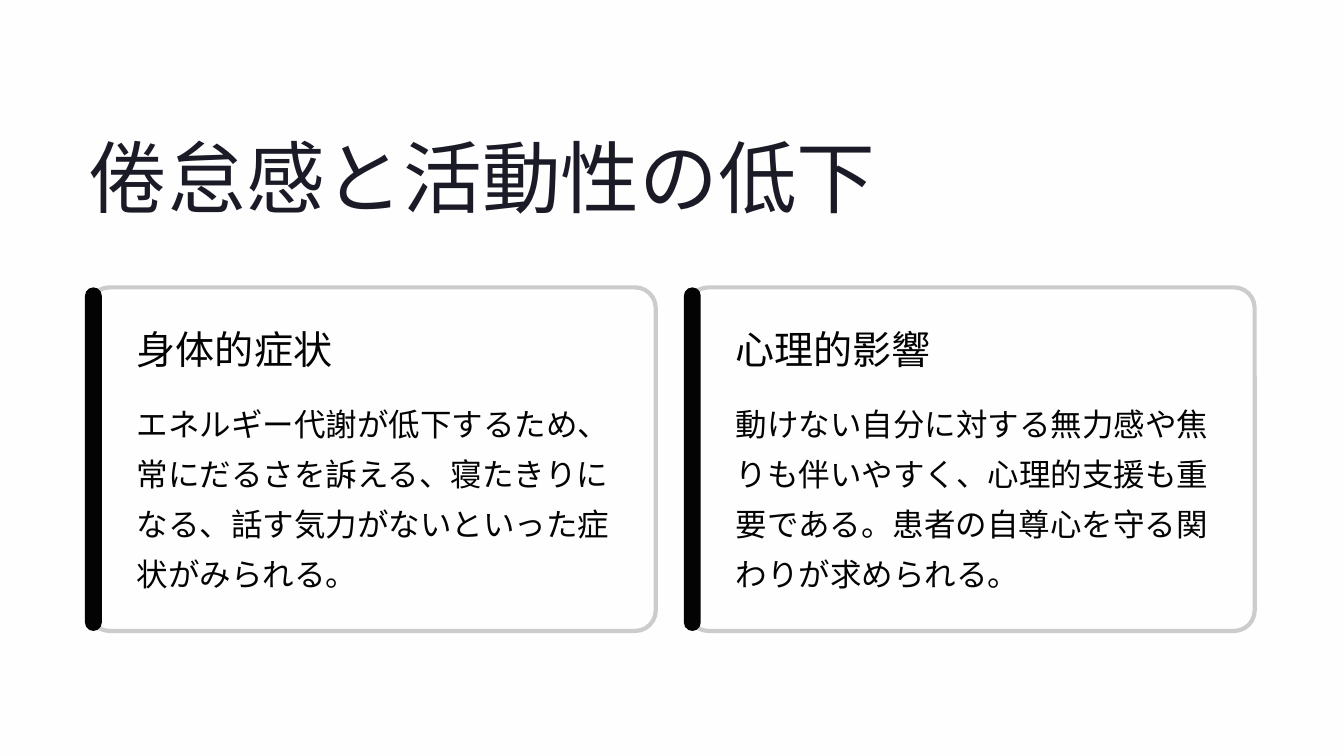
from lxml.etree import SubElement
from pptx import Presentation
from pptx.dml.color import RGBColor
from pptx.enum.shapes import MSO_SHAPE as Preset
from pptx.oxml.ns import qn
from pptx.util import Cm, Pt

COLORS = {
    "page": "FEFEFE",
    "card": "FFFFFF",
    "border": "CCCCCC",
    "title": "1B1B27",
    "ink": "030303",
}
FORMATS = {
    "title": {"size": Pt(67.5), "name": "Inter"},
    "heading": {"size": Pt(33.5), "name": "Inter"},
    "body": {"size": Pt(27), "name": "Cabin"},
}
SPACING = {"title": Pt(84.5), "heading": Pt(42), "body": Pt(43)}
CARDS = [
    (
        "身体的症状",
        "エネルギー代謝が低下するため、常にだるさを訴える、寝たきりになる、話す気力がないといった症状がみられる。",
    ),
    (
        "心理的影響",
        "動けない自分に対する無力感や焦りも伴いやすく、心理的支援も重要である。患者の自尊心を守る関わりが求められる。",
    ),
]
CARD_LEFT, CARD_TOP, CARD_WIDTH, CARD_HEIGHT = 2.69, 8.69, 17.14, 10.39
CARD_PITCH = 18.11

deck = Presentation()
deck.slide_width, deck.slide_height = Cm(40.64), Cm(22.86)
page = deck.slides.add_slide(deck.slide_layouts[6])
page.background.fill.solid()
page.background.fill.fore_color.rgb = RGBColor.from_string(COLORS["page"])


def add_text(words, role, color, left, top, width, height):
    box = page.shapes.add_textbox(Cm(left), Cm(top), Cm(width), Cm(height))
    frame = box.text_frame
    frame.word_wrap = role == "body"
    for side in ("left", "top", "right", "bottom"):
        setattr(frame, f"margin_{side}", 0)
    para = frame.paragraphs[0]
    para.line_spacing = SPACING[role]
    span = para.add_run()
    span.text = words
    for key, value in FORMATS[role].items():
        setattr(span.font, key, value)
    span.font.color.rgb = RGBColor.from_string(COLORS[color])


def add_rounded(left, width, radius, color):
    shape = page.shapes.add_shape(
        Preset.ROUNDED_RECTANGLE, Cm(left), Cm(CARD_TOP), Cm(width), Cm(CARD_HEIGHT)
    )
    shape.adjustments[0] = radius
    shape.shadow.inherit = False
    shape.fill.solid()
    shape.fill.fore_color.rgb = RGBColor.from_string(COLORS[color])
    shape.line.fill.background()
    return shape


add_text("倦怠感と活動性の低下", "title", "title", CARD_LEFT, 3.78, 23.95, 3)

for index, (heading, body) in enumerate(CARDS):
    left = CARD_LEFT + index * CARD_PITCH
    card = add_rounded(left, CARD_WIDTH, 0.06, "card")
    card.line.color.rgb = RGBColor.from_string(COLORS["border"])
    card.line.width = Pt(3.6)
    fill_color = card.fill._xPr.find(qn("a:solidFill"))[0]
    SubElement(fill_color, qn("a:alpha"), val="95000")
    add_rounded(left - 0.12, 0.51, 0.5, "ink")
    add_text(heading, "heading", "ink", left + 1.45, 9.78, 11.99, 1.5)
    add_text(body, "body", "ink", left + 1.45, 11.86, 14.6, 6.12)

deck.save("out.pptx")
